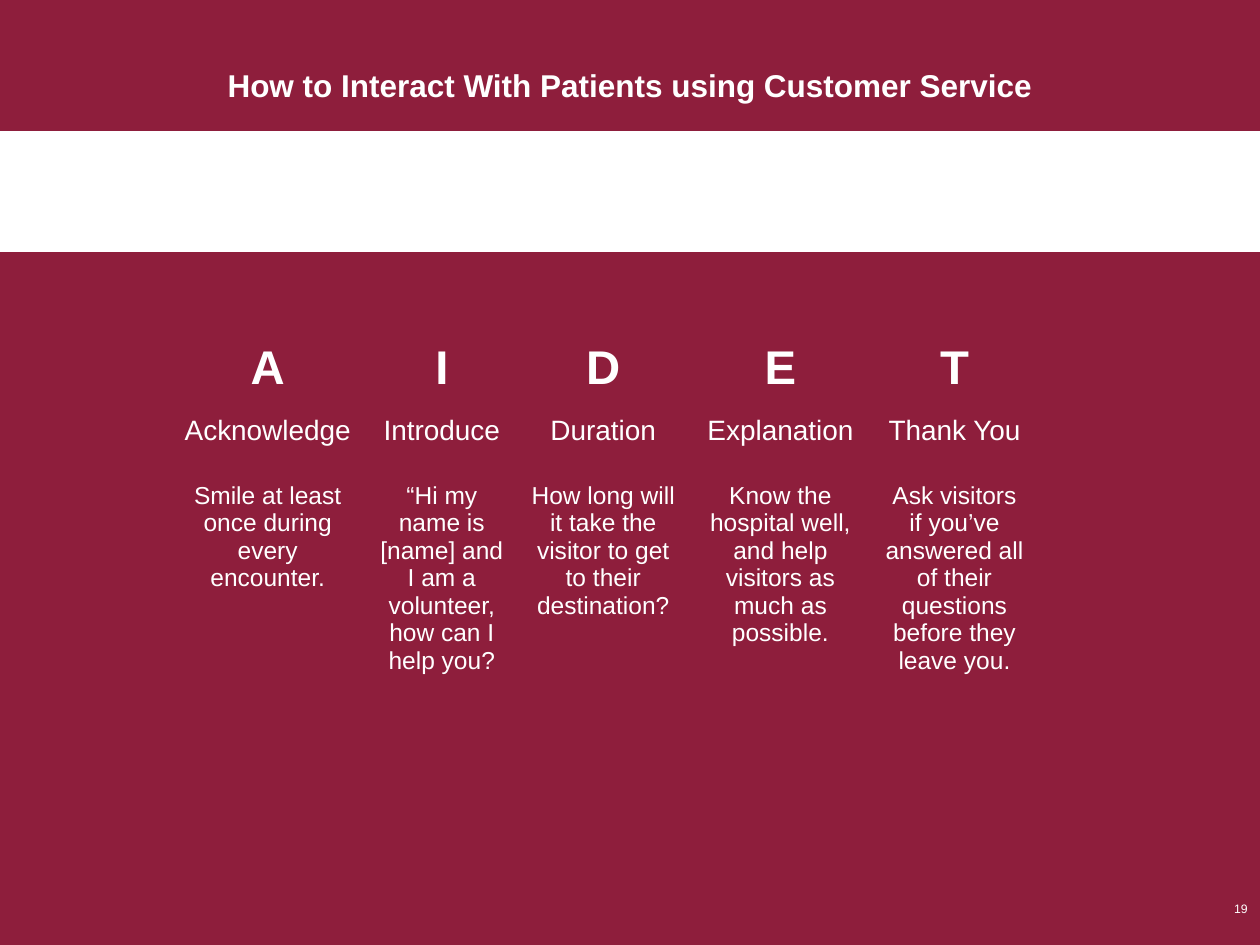
from pptx import Presentation
from pptx.dml.color import RGBColor
from pptx.enum.shapes import MSO_SHAPE
from pptx.enum.text import MSO_ANCHOR, PP_ALIGN
from pptx.util import Pt

RECT = MSO_SHAPE.RECTANGLE
MIDDLE = MSO_ANCHOR.MIDDLE
CENTER, RIGHT = PP_ALIGN.CENTER, PP_ALIGN.RIGHT
MAROON = RGBColor(0x8E, 0x1E, 0x3C)
WHITE = RGBColor(0xFF, 0xFF, 0xFF)
NO_STYLE = "{2D5ABB26-0587-4C30-8999-92F81FD0307C}"


def write(tf, text, size, align, bold=False):
    tf.text = text
    tf.word_wrap = True
    p = tf.paragraphs[0]
    p.alignment = align
    font = p.runs[0].font
    font.name = "Arial"
    font.size = Pt(size)
    font.bold = bold
    font.color.rgb = WHITE


def set_insets(tf, top):
    tf.vertical_anchor = MIDDLE
    tf.margin_left = tf.margin_right = tf.margin_bottom = Pt(7.2)
    tf.margin_top = Pt(top)


prs = Presentation()
prs.slide_width, prs.slide_height = Pt(720), Pt(540)
s = prs.slides.add_slide(prs.slide_layouts[5])
s.background.fill.solid()
s.background.fill.fore_color.rgb = MAROON

band = s.shapes.add_shape(RECT, 0, Pt(75), Pt(720), Pt(69))
band.shadow.inherit = False
band.fill.solid()
band.fill.fore_color.rgb = WHITE
band.line.fill.background()

title = s.shapes.title
title.left, title.top, title.width, title.height = Pt(80), 0, Pt(560), Pt(75)
write(title.text_frame, "How to Interact With Patients using Customer Service", 18, CENTER, True)
set_insets(title.text_frame, 29)

number = s.shapes.add_textbox(Pt(3), Pt(499), Pt(717), Pt(41))
write(number.text_frame, "19", 7, RIGHT)
set_insets(number.text_frame, 7.2)

steps = [
    ("A", "Acknowledge", "Smile at least once during every encounter.", 114),
    ("I", "Introduce", "“Hi my name is [name] and I am a volunteer, how can I help you?", 85),
    ("D", "Duration", "How long will it take the visitor to get to their destination?", 99.5),
    ("E", "Explanation", "Know the hospital well, and help visitors as much as possible.", 103),
    ("T", "Thank You", "Ask visitors if you’ve answered all of their questions before they leave you.", 96),
]
row_heights = [42, 38, 125]
text_sizes = [27, 16, 14]

frame = s.shapes.add_table(3, len(steps), Pt(96), Pt(190), Pt(497.5), Pt(sum(row_heights)))
table = frame.table
table.first_row = table.horz_banding = False
table._tbl.tblPr.find("{*}tableStyleId").text = NO_STYLE
for row, height in zip(table.rows, row_heights):
    row.height = Pt(height)
for c, (*texts, width) in enumerate(steps):
    table.columns[c].width = Pt(width)
    for r, (text, size) in enumerate(zip(texts, text_sizes)):
        cell = table.cell(r, c)
        cell.fill.background()
        cell.margin_left = cell.margin_right = Pt(7.2)
        cell.margin_top = cell.margin_bottom = Pt(5)
        write(cell.text_frame, text, size, CENTER, r == 0)

prs.save("out.pptx")
